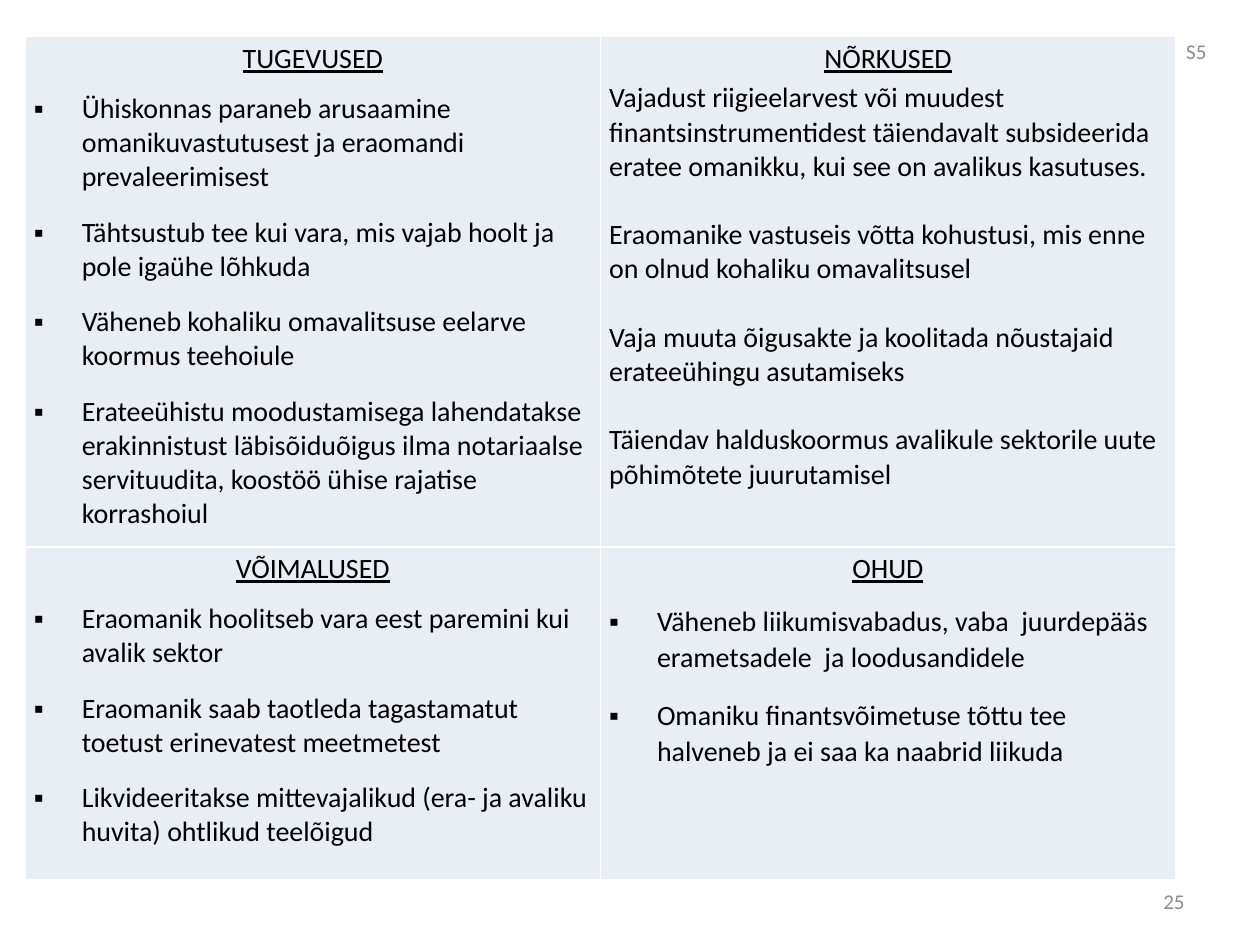
from dataclasses import dataclass

from lxml.etree import SubElement
from pptx import Presentation
from pptx.dml.color import RGBColor
from pptx.enum.text import MSO_ANCHOR, PP_ALIGN as Align
from pptx.oxml.ns import qn
from pptx.util import Inches, Pt


@dataclass(frozen=True)
class Theme:
    font: str = "Calibri"
    body_size: int = 16
    label_size: int = 12
    ink: str = "000000"
    muted: str = "8C8C8C"
    cell: str = "E9EDF4"
    border: str = "FFFFFF"


@dataclass(frozen=True)
class ListStyle:
    before: float
    after: float = 0
    line_spacing: float = 1.0
    bulleted: bool = True


BULLETS = ListStyle(before=6, after=6)
LOOSE_BULLETS = ListStyle(before=6, after=6, line_spacing=1.07)
SEPARATE_PARAGRAPHS = ListStyle(before=19.5, bulleted=False)

SWOT = [
    [
        ("TUGEVUSED", BULLETS, [
            "Ühiskonnas paraneb arusaamine omanikuvastutusest ja eraomandi prevaleerimisest",
            "Tähtsustub tee kui vara, mis vajab hoolt ja pole igaühe lõhkuda",
            "Väheneb kohaliku omavalitsuse eelarve koormus teehoiule",
            "Erateeühistu moodustamisega lahendatakse erakinnistust läbisõiduõigus ilma "
            "notariaalse servituudita, koostöö ühise rajatise korrashoiul",
        ]),
        ("NÕRKUSED", SEPARATE_PARAGRAPHS, [
            "Vajadust riigieelarvest või muudest finantsinstrumentidest täiendavalt "
            "subsideerida eratee omanikku, kui see on avalikus kasutuses.",
            "Eraomanike vastuseis võtta kohustusi, mis enne on olnud kohaliku omavalitsusel",
            "Vaja muuta õigusakte ja koolitada nõustajaid erateeühingu asutamiseks",
            "Täiendav halduskoormus avalikule sektorile uute põhimõtete juurutamisel",
        ]),
    ],
    [
        ("VÕIMALUSED", BULLETS, [
            "Eraomanik hoolitseb vara eest paremini kui avalik sektor",
            "Eraomanik saab taotleda tagastamatut toetust erinevatest meetmetest",
            "Likvideeritakse mittevajalikud (era- ja avaliku huvita) ohtlikud teelõigud",
        ]),
        ("OHUD", LOOSE_BULLETS, [
            "Väheneb liikumisvabadus, vaba  juurdepääs erametsadele  ja loodusandidele",
            "Omaniku finantsvõimetuse tõttu tee halveneb ja ei saa ka naabrid liikuda",
        ]),
    ],
]


class SlideBuilder:
    def __init__(self, slide, theme):
        self.slide = slide
        self.theme = theme

    def format_runs(self, paragraph, size, color, underline=False):
        for run in paragraph.runs:
            run.font.name = self.theme.font
            run.font.size = Pt(size)
            run.font.color.rgb = RGBColor.from_string(color)
            run.font.underline = underline

    def space(self, paragraph, before, after, line_spacing):
        paragraph.space_before = Pt(before)
        paragraph.space_after = Pt(after)
        paragraph.line_spacing = line_spacing

    def label(self, text, left, top, width, height, alignment):
        box = self.slide.shapes.add_textbox(
            Inches(left), Inches(top), Inches(width), Inches(height))
        frame = box.text_frame
        frame.word_wrap = True
        frame.vertical_anchor = MSO_ANCHOR.MIDDLE
        frame.text = text
        paragraph = frame.paragraphs[0]
        paragraph.alignment = alignment
        self.format_runs(paragraph, self.theme.label_size, self.theme.muted)

    def bullet(self, paragraph):
        properties = paragraph._p.get_or_add_pPr()
        indent = Inches(0.38)
        properties.set("marL", str(indent))
        properties.set("indent", str(-indent))
        SubElement(properties, qn("a:buFont"), typeface="Arial")
        SubElement(properties, qn("a:buChar"), char="▪")

    def borders(self, cell):
        properties = cell._tc.get_or_add_tcPr()
        for side in ("lnL", "lnR", "lnT", "lnB"):
            line = SubElement(properties, qn(f"a:{side}"), w=str(Pt(1)))
            fill = SubElement(line, qn("a:solidFill"))
            SubElement(fill, qn("a:srgbClr"), val=self.theme.border)

    def quadrant(self, cell, heading, style, items):
        """Fill one cell with an underlined heading and its list."""
        self.borders(cell)
        cell.fill.solid()
        cell.fill.fore_color.rgb = RGBColor.from_string(self.theme.cell)
        cell.margin_left = cell.margin_right = Inches(0.07)
        cell.margin_top = cell.margin_bottom = 0

        frame = cell.text_frame
        frame.text = heading
        title = frame.paragraphs[0]
        title.alignment = Align.CENTER
        self.space(title, 3, 3, 1.15)
        self.format_runs(title, self.theme.body_size, self.theme.ink, underline=True)

        for index, item in enumerate(items):
            paragraph = frame.add_paragraph()
            paragraph.text = item
            paragraph.alignment = Align.LEFT
            before = style.before if style.bulleted or index else 0
            self.space(paragraph, before, style.after, style.line_spacing)
            if style.bulleted:
                self.bullet(paragraph)
            self.format_runs(paragraph, self.theme.body_size, self.theme.ink)

    def swot_table(self, quadrants, left, top, width, row_heights):
        column_count = len(quadrants[0])
        table = self.slide.shapes.add_table(
            len(quadrants), column_count, Inches(left), Inches(top),
            Inches(width), Inches(sum(row_heights))).table
        table.first_row = table.horz_banding = False
        for column in table.columns:
            column.width = Inches(width / column_count)
        for row_index, (height, row) in enumerate(zip(row_heights, quadrants)):
            table.rows[row_index].height = Inches(height)
            for column_index, content in enumerate(row):
                self.quadrant(table.cell(row_index, column_index), *content)


def main():
    presentation = Presentation()
    presentation.slide_width = Inches(10)
    presentation.slide_height = Inches(7.5)
    blank_layout = presentation.slide_layouts[6]
    builder = SlideBuilder(presentation.slides.add_slide(blank_layout), Theme())

    builder.label("S5", 9.17, 0.21, 0.65, 0.4, Align.CENTER)
    builder.label("25", 7.17, 6.95, 2.33, 0.4, Align.RIGHT)
    builder.swot_table(SWOT, 0.2, 0.29, 9.13, [4.05, 2.64])
    presentation.save("out.pptx")


if __name__ == "__main__":
    main()
